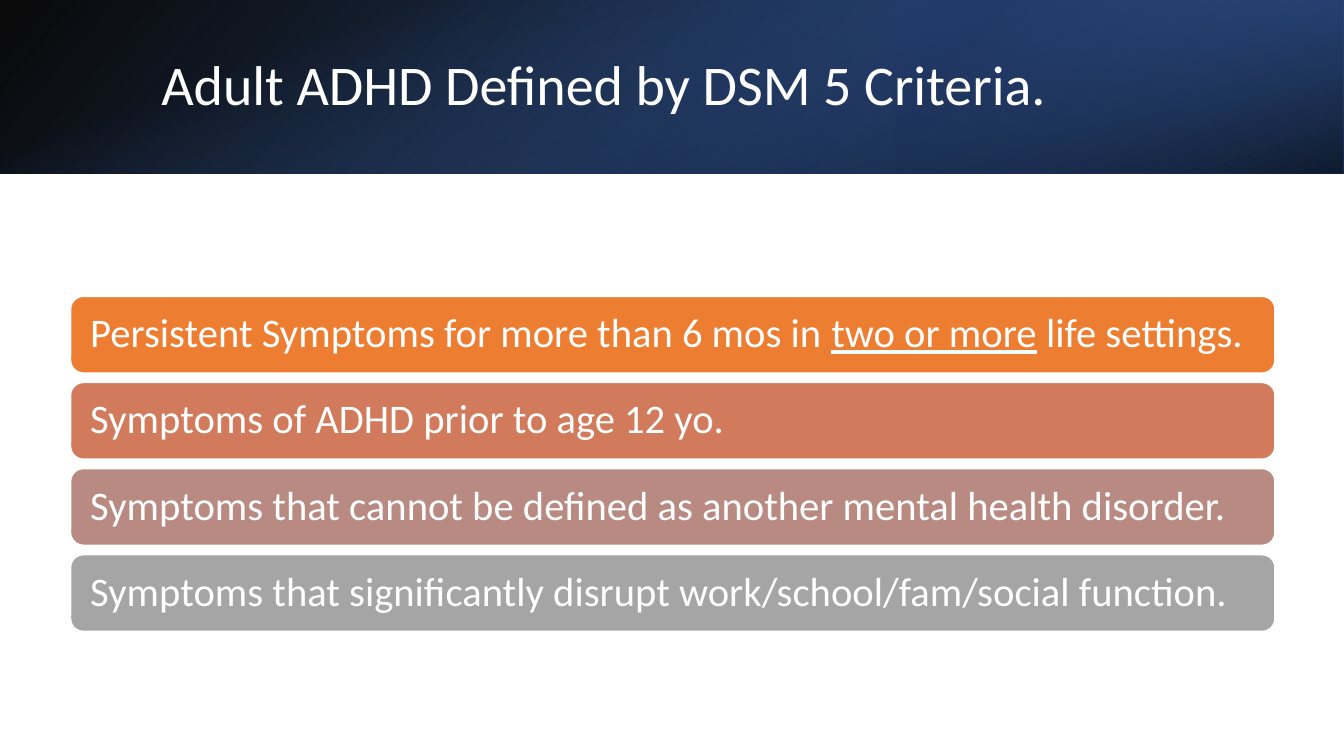
"""Build the slide on the DSM 5 criteria for adult ADHD."""
from dataclasses import dataclass

from lxml import etree
from pptx import Presentation
from pptx.dml.color import RGBColor
from pptx.enum.shapes import MSO_SHAPE
from pptx.enum.text import MSO_ANCHOR, MSO_AUTO_SIZE, PP_ALIGN
from pptx.oxml.ns import qn
from pptx.util import Cm, Pt

RECTANGLE = MSO_SHAPE.RECTANGLE
ROUNDED = MSO_SHAPE.ROUNDED_RECTANGLE
MIDDLE = MSO_ANCHOR.MIDDLE
LEFT = PP_ALIGN.LEFT
NO_AUTOFIT = MSO_AUTO_SIZE.NONE

FONT = "Calibri"
WHITE = "FFFFFF"
SLIDE_WIDTH, SLIDE_HEIGHT = 33.87, 19.05
BANNER_HEIGHT = 4.37
CARD_LEFT, CARD_TOP = 1.78, 7.47
CARD_WIDTH, CARD_HEIGHT = 30.35, 1.93
CARD_PITCH = 2.17
CARD_INSET = 0.4


@dataclass(frozen=True)
class Stop:
    position: float
    color: str
    opacity: int


@dataclass(frozen=True)
class BannerLayer:
    left: float
    top: float
    width: float
    height: float
    rotation: int
    flipped: bool
    angle: int
    stops: tuple[Stop, Stop]


@dataclass(frozen=True)
class Phrase:
    text: str
    underlined: bool = False


@dataclass(frozen=True)
class Criterion:
    color: str
    phrases: tuple[Phrase, ...]


BANNER_LAYERS = (
    BannerLayer(0, 0, SLIDE_WIDTH, BANNER_HEIGHT, 0, True, 140,
                (Stop(0, "000000", 96), Stop(1, "2F5597", 100))),
    BannerLayer(22.58, 0, 11.29, BANNER_HEIGHT, 180, True, 320,
                (Stop(0.19, "203864", 68), Stop(1, "4472C4", 79))),
    BannerLayer(14.75, -14.75, BANNER_HEIGHT, SLIDE_WIDTH, 90, False, 340,
                (Stop(0.23, "4472C4", 0), Stop(0.99, "000000", 74))),
)

CRITERIA = (
    Criterion("ED7D31", (
        Phrase("Persistent Symptoms for more than 6 mos in "),
        Phrase("two or more", underlined=True),
        Phrase(" life settings."),
    )),
    Criterion("D17B5C", (Phrase("Symptoms of ADHD prior to age 12 yo."),)),
    Criterion("B98A82", (
        Phrase("Symptoms that cannot be defined as another mental health disorder."),
    )),
    Criterion("A5A5A5", (
        Phrase("Symptoms that significantly disrupt work/school/fam/social function."),
    )),
)


def rgb(color: str) -> RGBColor:
    return RGBColor.from_string(color)


def format_paragraph(paragraph, size: float) -> None:
    paragraph.alignment = LEFT
    paragraph.line_spacing = 0.9
    paragraph.font.name = FONT
    paragraph.font.size = Pt(size)
    paragraph.font.color.rgb = rgb(WHITE)


def draw_banner_layer(slide, layer: BannerLayer) -> None:
    band = slide.shapes.add_shape(
        RECTANGLE, Cm(layer.left), Cm(layer.top), Cm(layer.width), Cm(layer.height))
    band.shadow.inherit = False
    band.line.fill.background()
    band.rotation = layer.rotation
    properties = band.element.spPr
    if layer.flipped:
        properties.find(qn("a:xfrm")).set("flipH", "1")
    band.fill.gradient()
    band.fill.gradient_angle = 360 - layer.angle
    for gradient_stop, stop in zip(band.fill.gradient_stops, layer.stops):
        gradient_stop.position = stop.position
        gradient_stop.color.rgb = rgb(stop.color)
    for color, stop in zip(properties.iter(qn("a:srgbClr")), layer.stops):
        etree.SubElement(color, qn("a:alpha")).set("val", str(stop.opacity * 1000))


def write_title(slide, text: str) -> None:
    title = slide.shapes.title
    title.left, title.top = Cm(3.81), Cm(0.97)
    title.width, title.height = Cm(27.89), Cm(2.44)
    frame = title.text_frame
    frame.text = text
    frame.auto_size = NO_AUTOFIT
    frame.vertical_anchor = MIDDLE
    format_paragraph(frame.paragraphs[0], 40)
    slide.shapes.element.append(title.element)


def draw_criterion(slide, criterion: Criterion, top: float) -> None:
    card = slide.shapes.add_shape(
        ROUNDED, Cm(CARD_LEFT), Cm(top), Cm(CARD_WIDTH), Cm(CARD_HEIGHT))
    card.shadow.inherit = False
    card.fill.solid()
    card.fill.fore_color.rgb = rgb(criterion.color)
    card.line.color.rgb = rgb(WHITE)
    card.line.width = Pt(1)
    frame = card.text_frame
    frame.word_wrap = True
    frame.vertical_anchor = MIDDLE
    frame.margin_left = frame.margin_right = Cm(CARD_INSET)
    paragraph = frame.paragraphs[0]
    format_paragraph(paragraph, 29)
    for phrase in criterion.phrases:
        run = paragraph.add_run()
        run.text = phrase.text
        if phrase.underlined:
            run.font.underline = True


def main() -> None:
    presentation = Presentation()
    presentation.slide_width = Cm(SLIDE_WIDTH)
    presentation.slide_height = Cm(SLIDE_HEIGHT)
    slide = presentation.slides.add_slide(presentation.slide_layouts[5])
    for layer in BANNER_LAYERS:
        draw_banner_layer(slide, layer)
    write_title(slide, "Adult ADHD Defined by DSM 5 Criteria.")
    for index, criterion in enumerate(CRITERIA):
        draw_criterion(slide, criterion, CARD_TOP + index * CARD_PITCH)
    presentation.save("out.pptx")


if __name__ == "__main__":
    main()
